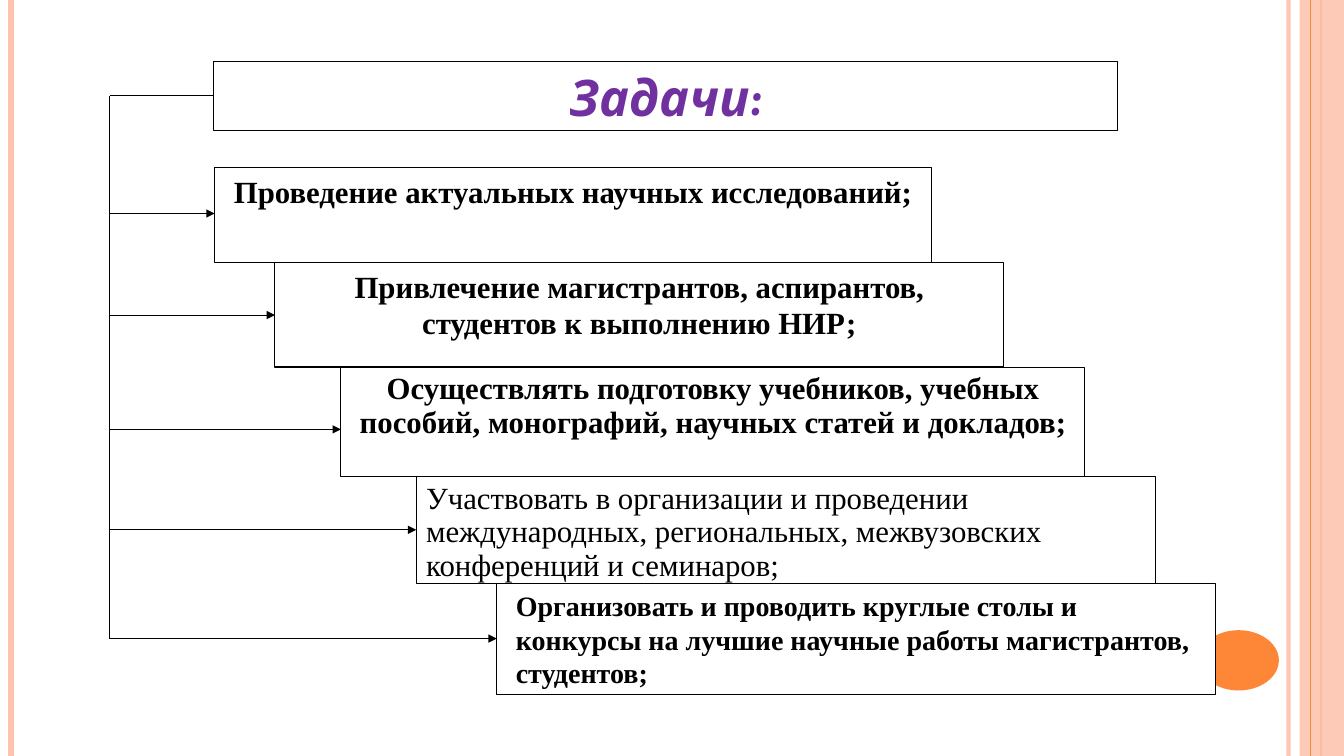
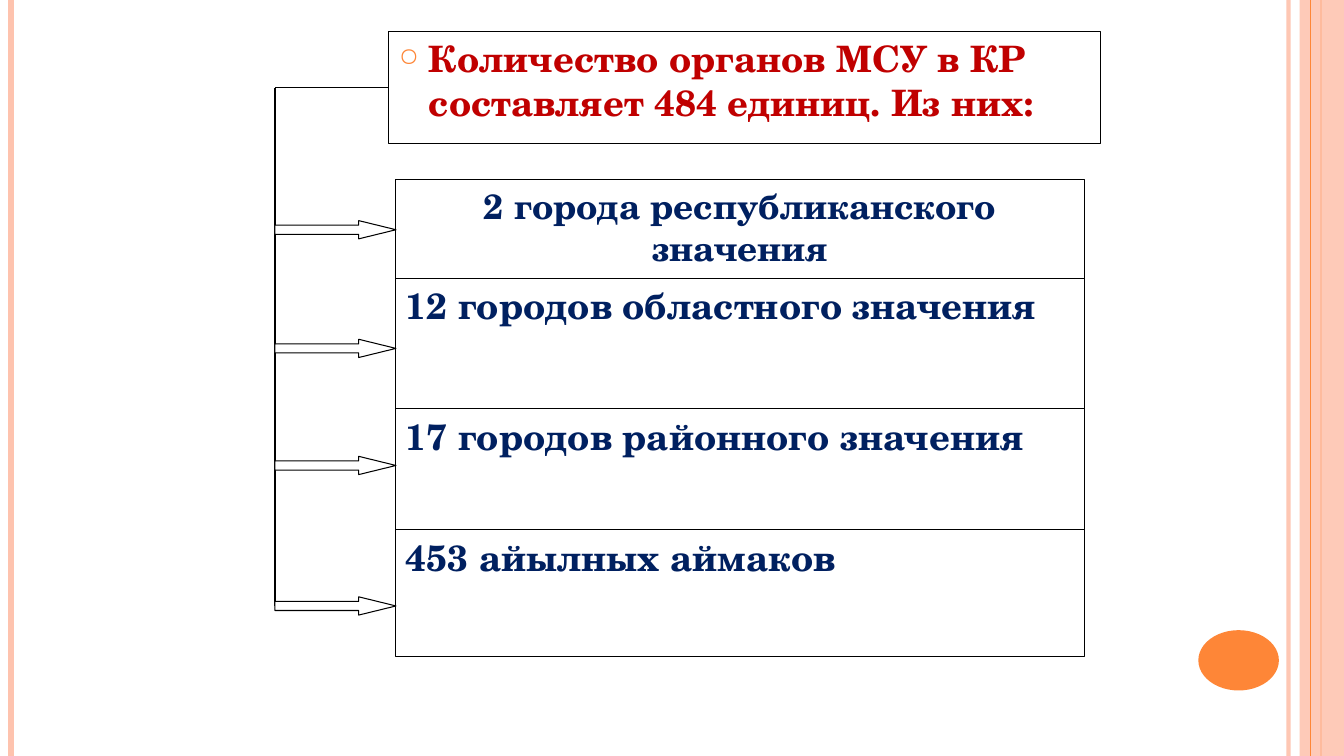
from dataclasses import dataclass

from pptx import Presentation
from pptx.dml.color import RGBColor
from pptx.enum.shapes import MSO_CONNECTOR, MSO_SHAPE
from pptx.enum.text import MSO_ANCHOR, PP_ALIGN
from pptx.oxml.ns import qn
from pptx.util import Cm, Pt
from lxml.etree import SubElement

SLIDE_WIDTH = 33.87
SLIDE_HEIGHT = 19.05

WHITE = RGBColor(0xFF, 0xFF, 0xFF)
BLACK = RGBColor(0x00, 0x00, 0x00)
PEACH = RGBColor(0xFE, 0xC3, 0xAE)
ORANGE = RGBColor(0xFE, 0x86, 0x37)
PURPLE = RGBColor(0x70, 0x30, 0xA0)
RED = RGBColor(0xC0, 0x00, 0x00)
NAVY = RGBColor(0x00, 0x20, 0x60)

OUTLINE = 0.75
SERIF = "Times New Roman"
SCHOLA = "TeX Gyre Schola"


@dataclass
class Box:
    left: float
    top: float
    width: float
    height: float


@dataclass
class TextStyle:
    font: str
    size: int
    color: RGBColor
    bold: bool = True
    italic: bool = False
    align: PP_ALIGN = PP_ALIGN.LEFT
    line_points: int = 0
    margin: float = 0
    bullet: str = ""


@dataclass
class Row:
    text: str
    style: TextStyle
    indent: float
    height: float
    pointer: float


def set_alpha(color_parent, percent):
    color = next(color_parent.iter(qn("a:srgbClr")))
    SubElement(color, qn("a:alpha")).set("val", str(percent * 1000))


def add_line(slide, start, end, color=BLACK, width=OUTLINE, arrow=False):
    line = slide.shapes.add_connector(
        MSO_CONNECTOR.STRAIGHT, *[Cm(value) for value in (*start, *end)])
    line.line.color.rgb = color
    line.line.width = Pt(width)
    properties = line._element.spPr
    SubElement(properties, qn("a:effectLst"))
    if arrow:
        SubElement(properties.find(qn("a:ln")), qn("a:tailEnd")).set("type", "triangle")
    return line


def add_shape(slide, kind, box, fill=WHITE, outline=BLACK):
    shape = slide.shapes.add_shape(
        kind, Cm(box.left), Cm(box.top), Cm(box.width), Cm(box.height))
    shape.shadow.inherit = False
    shape.fill.solid()
    shape.fill.fore_color.rgb = fill
    if outline is None:
        shape.line.fill.background()
    else:
        shape.line.color.rgb = outline
        shape.line.width = Pt(OUTLINE)
    return shape


def add_bullet(paragraph, character):
    properties = paragraph._p.get_or_add_pPr()
    properties.set("marL", str(Cm(0.76)))
    properties.set("indent", str(-Cm(0.76)))
    color = SubElement(properties, qn("a:buClr"))
    SubElement(color, qn("a:srgbClr")).set("val", str(ORANGE))
    SubElement(properties, qn("a:buSzPct")).set("val", "70000")
    SubElement(properties, qn("a:buChar")).set("char", character)


def add_text_box(slide, box, text, style):
    frame = add_shape(slide, MSO_SHAPE.RECTANGLE, box).text_frame
    frame.word_wrap = True
    frame.vertical_anchor = MSO_ANCHOR.TOP
    paragraph = frame.paragraphs[0]
    paragraph.alignment = style.align
    if style.line_points:
        paragraph.line_spacing = Pt(style.line_points)
    if style.margin:
        paragraph._p.get_or_add_pPr().set("marL", str(Cm(style.margin)))
    if style.bullet:
        add_bullet(paragraph, style.bullet)
    run = paragraph.add_run()
    run.text = text
    run.font.name = style.font
    run.font.size = Pt(style.size)
    run.font.bold = style.bold
    run.font.italic = style.italic
    run.font.color.rgb = style.color


def add_side_bands(slide, box):
    right = box.left + box.width
    bottom = box.top + box.height

    def add_rule(x, color, width):
        return add_line(slide, (x, box.top), (x, bottom), color, width)

    set_alpha(add_rule(right - 1.4, PEACH, 3)._element.spPr, 93)
    add_rule(box.left + 0.28, PEACH, 4.5)
    add_rule(right - 0.57, ORANGE, 1.5)
    band = add_shape(slide, MSO_SHAPE.RECTANGLE,
                     Box(right - 1.12, box.top, 1.12, box.height), PEACH, None)
    set_alpha(band._element.spPr, 87)
    add_rule(right - 0.85, ORANGE, 0.75)
    add_shape(slide, MSO_SHAPE.OVAL,
              Box(right - 3.67, bottom - 3.17, 2.03, 1.52), ORANGE, None)


def add_line_pointer(slide, start, length):
    x, y = start
    add_line(slide, start, (x + length, y), arrow=True)


def add_block_pointer(slide, start, length):
    x, y = start
    height = 0.46
    arrow = add_shape(slide, MSO_SHAPE.RIGHT_ARROW,
                      Box(x, y - height / 2, length, height))
    arrow.adjustments[0] = 0.5
    arrow.adjustments[1] = 2.04


def add_branch_diagram(slide, box, title, title_style, title_box, rows,
                       row_width, rows_top, add_pointer):
    heading = Box(box.left + title_box.left, box.top + title_box.top,
                  title_box.width, title_box.height)
    add_text_box(slide, heading, title, title_style)
    spine_top = heading.top + heading.height / 2
    add_line(slide, (heading.left, spine_top), (box.left, spine_top))

    top = box.top + rows_top
    pointers = []
    for row, width in zip(rows, row_width):
        add_text_box(slide, Box(box.left + row.indent, top, width, row.height),
                     row.text, row.style)
        pointers.append((top + row.pointer, row.indent))
        top += row.height

    add_line(slide, (box.left, spine_top), (box.left, pointers[-1][0]))
    for y, length in pointers:
        add_pointer(slide, (box.left, y), length)


def add_tasks(slide, box):
    centered = TextStyle(SERIF, 22, BLACK, align=PP_ALIGN.CENTER)
    compact = TextStyle(SERIF, 22, BLACK, align=PP_ALIGN.CENTER, line_points=24)
    plain = TextStyle(SERIF, 22, BLACK, bold=False, line_points=24)
    indented = TextStyle(SERIF, 20, BLACK, line_points=24, margin=0.23)
    rows = [
        Row("Проведение актуальных научных исследований;",
            centered, 2.64, 2.39, 1.16),
        Row("Привлечение магистрантов, аспирантов, студентов к выполнению НИР;",
            centered, 4.16, 2.64, 1.33),
        Row("Осуществлять подготовку учебников, учебных пособий, монографий, "
            "научных статей и докладов;", compact, 5.82, 2.76, 1.57),
        Row("Участвовать в организации и проведении международных, региональных, "
            "межвузовских конференций и семинаров;", plain, 7.72, 2.7, 1.34),
        Row("Организовать и проводить круглые столы и конкурсы на лучшие научные "
            "работы магистрантов, студентов;", indented, 9.75, 2.79, 1.38),
    ]
    title_style = TextStyle("Karla", 36, PURPLE, italic=True, align=PP_ALIGN.CENTER)
    add_branch_diagram(slide, box, "Задачи:", title_style,
                       Box(2.61, 0, 22.78, 1.73), rows,
                       [18.06, 18.36, 18.75, 18.62, 18.11], 2.67, add_line_pointer)


def add_local_bodies(slide, box):
    centered = TextStyle(SCHOLA, 25, NAVY, align=PP_ALIGN.CENTER)
    left = TextStyle(SCHOLA, 26, NAVY)
    indent = 3.05
    rows = [
        Row("2 города республиканского значения", centered, indent, 2.5, 1.27),
        Row("12 городов областного значения", left, indent, 3.28, 1.76),
        Row("17 городов районного значения", left, indent, 3.05, 1.43),
        Row("453 айылных аймаков", left, indent, 3.2, 1.92),
    ]
    title_style = TextStyle(SCHOLA, 26, RED, bullet="○")
    add_branch_diagram(slide, box,
                       "Количество органов МСУ в КР составляет 484 единиц. Из них:",
                       title_style, Box(2.87, 0, 17.93, 2.84), rows,
                       [17.35] * len(rows), 3.73, add_block_pointer)


def main():
    presentation = Presentation()
    presentation.slide_width = Cm(SLIDE_WIDTH)
    presentation.slide_height = Cm(SLIDE_HEIGHT)
    contents = [
        (add_tasks, Box(2.77, 1.55, 27.86, 15.95)),
        (add_local_bodies, Box(6.93, 0.79, 20.8, 15.76)),
    ]
    for add_content, box in contents:
        slide = presentation.slides.add_slide(presentation.slide_layouts[6])
        add_side_bands(slide, Box(0, 0, SLIDE_WIDTH, SLIDE_HEIGHT))
        add_content(slide, box)
    presentation.save("out.pptx")


if __name__ == "__main__":
    main()
